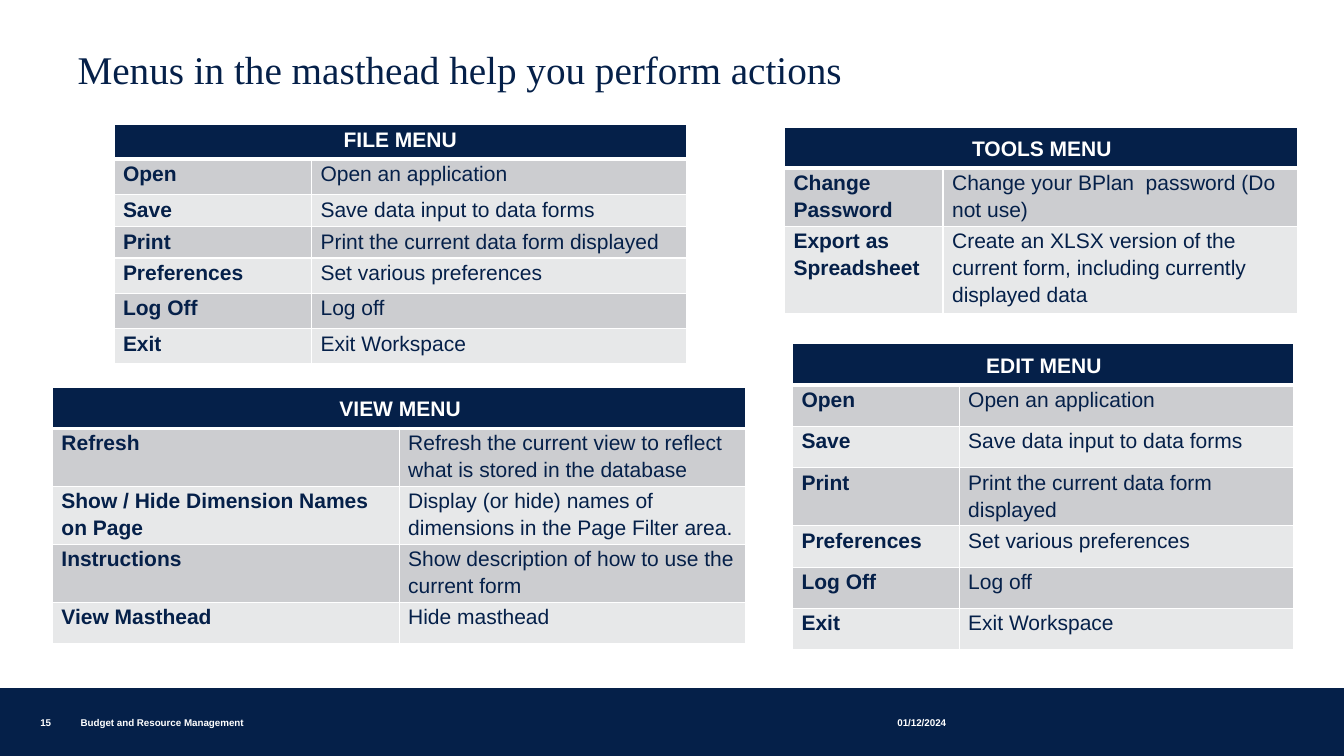
from dataclasses import dataclass

from lxml.etree import SubElement
from pptx import Presentation
from pptx.dml.color import RGBColor
from pptx.enum.shapes import MSO_SHAPE
from pptx.enum.text import MSO_ANCHOR, PP_ALIGN
from pptx.oxml.ns import qn
from pptx.slide import Slide
from pptx.table import _Cell
from pptx.util import Inches, Length, Pt

NAVY = "052049"
WHITE = "FFFFFF"
BANDS = ("CCCDD0", "E7E8E9")
SLIDE_WIDTH, SLIDE_HEIGHT = 13.33, 7.5
ROW = 5.47


@dataclass(frozen=True)
class Label:
    """Positions and sizes are percentages of the slide."""
    text: str
    left: float
    top: float
    width: float
    height: float
    size: float = 7
    font: str = "Arial"
    color: str = WHITE
    bold: bool = True
    inset: tuple[float, float] = (0, 0)
    anchor: MSO_ANCHOR = MSO_ANCHOR.BOTTOM
    line_spacing: float = 1.0


@dataclass(frozen=True)
class Menu:
    """Positions, columns and rows are percentages of the slide."""
    title: str
    left: float
    top: float
    columns: tuple[float, float]
    rows: tuple[float, ...]
    items: tuple[tuple[str, str], ...]
    compact_header: bool = False


APPLICATION_ITEMS = (
    ("Open", "Open an application"),
    ("Save", "Save data input to data forms"),
    ("Print", "Print the current data form displayed"),
    ("Preferences", "Set various preferences"),
    ("Log Off", "Log off"),
    ("Exit", "Exit Workspace"),
)

VIEW_ITEMS = (
    ("Refresh", "Refresh the current view to reflect what is stored in the database"),
    ("Show / Hide Dimension Names on Page",
     "Display (or hide) names of dimensions in the Page Filter area."),
    ("Instructions", "Show description of how to use the current form"),
    ("View Masthead", "Hide masthead"),
)

TOOLS_ITEMS = (
    ("Change Password", "Change your BPlan  password (Do not use)"),
    ("Export as Spreadsheet",
     "Create an XLSX version of the current form, including currently displayed data"),
)

MENUS = (
    Menu("FILE MENU", 8.48, 16.4, (14.7, 27.9),
         (4.4, 4.67, 4.27, 4.13, 4.67, 4.67, 4.67), APPLICATION_ITEMS, True),
    Menu("VIEW MENU", 3.9, 51.2, (25.8, 25.8), (ROW,) * 5, VIEW_ITEMS),
    Menu("TOOLS MENU", 58.37, 16.8, (11.8, 26.35), (ROW,) * 3, TOOLS_ITEMS),
    Menu("EDIT MENU", 58.97, 45.47, (12.4, 24.85), (ROW,) * 7, APPLICATION_ITEMS),
)

LABELS = (
    Label("Menus in the masthead help you perform actions", 5.03, 6.27, 88.5, 6.67,
          28, "Times New Roman", NAVY, False, (0.1, 0.05), MSO_ANCHOR.MIDDLE, 0.85),
    Label("15", 3, 94.13, 2.7, 2.27),
    Label("Budget and Resource Management", 6, 94.4, 47.2, 2),
    Label("01/12/2024", 66.77, 94.13, 10.13, 2.27),
)


def across(percent: float) -> Length:
    return Inches(SLIDE_WIDTH * percent / 100)


def down(percent: float) -> Length:
    return Inches(SLIDE_HEIGHT * percent / 100)


def rgb(color: str) -> RGBColor:
    return RGBColor.from_string(color)


def set_font(paragraph, name: str, size: float, color: str, bold: bool) -> None:
    paragraph.font.name = name
    paragraph.font.size = Pt(size)
    paragraph.font.bold = bold
    paragraph.font.color.rgb = rgb(color)


def add_footer_bar(slide: Slide) -> None:
    bar = slide.shapes.add_shape(
        MSO_SHAPE.RECTANGLE, 0, down(91.2), across(100), down(8.8))
    bar.shadow.inherit = False
    bar.fill.solid()
    bar.fill.fore_color.rgb = rgb(NAVY)
    bar.line.color.rgb = rgb(NAVY)
    bar.line.width = Pt(1.5)


def add_label(slide: Slide, label: Label) -> None:
    box = slide.shapes.add_textbox(across(label.left), down(label.top),
                                   across(label.width), down(label.height))
    frame = box.text_frame
    frame.word_wrap = True
    frame.vertical_anchor = label.anchor
    horizontal, vertical = label.inset
    frame.margin_left = frame.margin_right = Inches(horizontal)
    frame.margin_top = frame.margin_bottom = Inches(vertical)
    paragraph = frame.paragraphs[0]
    paragraph.text = label.text
    paragraph.line_spacing = label.line_spacing
    set_font(paragraph, label.font, label.size, label.color, label.bold)


def set_borders(cell: _Cell, bottom: float) -> None:
    """Draw white borders; the bottom one has its own width in points."""
    properties = cell._tc.get_or_add_tcPr()
    for side, width in (("L", 1), ("R", 1), ("T", 1), ("B", bottom)):
        border = SubElement(properties, qn(f"a:ln{side}"), w=str(Pt(width)))
        fill = SubElement(border, qn("a:solidFill"))
        SubElement(fill, qn("a:srgbClr"), val=WHITE)


def fill_cell(cell: _Cell, text: str, fill: str, color: str, bold: bool,
              is_header: bool = False, compact: bool = False) -> None:
    set_borders(cell, 3 if is_header else 1)
    cell.fill.solid()
    cell.fill.fore_color.rgb = rgb(fill)
    paragraph = cell.text_frame.paragraphs[0]
    paragraph.text = text
    paragraph.alignment = PP_ALIGN.CENTER if is_header else PP_ALIGN.LEFT
    if not compact:
        cell.margin_left = cell.margin_right = Inches(0.07)
        cell.margin_top = cell.margin_bottom = 0
        cell.vertical_anchor = MSO_ANCHOR.MIDDLE if is_header else MSO_ANCHOR.TOP
        paragraph.line_spacing = 1.15
        paragraph.space_after = Pt(2)
        paragraph._p.get_or_add_pPr().set("marL", str(Inches(0.02)))
    set_font(paragraph, "Arial", 15, color, bold)


def add_menu(slide: Slide, menu: Menu) -> None:
    table = slide.shapes.add_table(
        len(menu.rows), len(menu.columns), across(menu.left), down(menu.top),
        across(sum(menu.columns)), down(sum(menu.rows))).table
    for column, width in zip(table.columns, menu.columns):
        column.width = across(width)
    for row, height in zip(table.rows, menu.rows):
        row.height = down(height)
    table.cell(0, 0).merge(table.cell(0, 1))
    fill_cell(table.cell(0, 0), menu.title, NAVY, WHITE, True, True, menu.compact_header)
    for index, item in enumerate(menu.items):
        for column, text in enumerate(item):
            fill_cell(table.cell(index + 1, column), text,
                      BANDS[index % 2], NAVY, column == 0)


def main() -> None:
    presentation = Presentation()
    presentation.slide_width = Inches(SLIDE_WIDTH)
    presentation.slide_height = Inches(SLIDE_HEIGHT)
    slide = presentation.slides.add_slide(presentation.slide_layouts[6])
    add_footer_bar(slide)
    for label in LABELS:
        add_label(slide, label)
    for menu in MENUS:
        add_menu(slide, menu)
    presentation.save("out.pptx")


if __name__ == "__main__":
    main()
